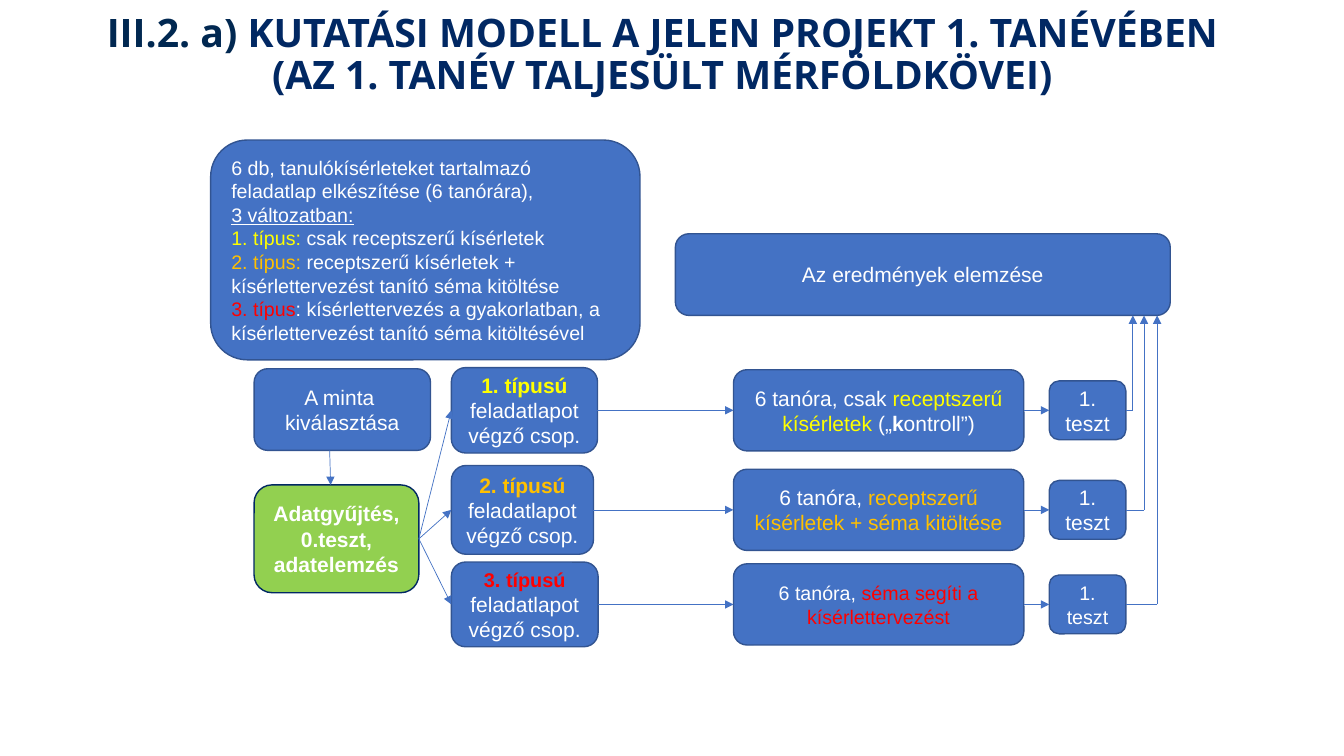
from lxml import etree
from pptx import Presentation
from pptx.dml.color import RGBColor
from pptx.enum.shapes import MSO_CONNECTOR, MSO_SHAPE
from pptx.enum.text import MSO_ANCHOR, MSO_AUTO_SIZE, PP_ALIGN
from pptx.oxml.ns import qn
from pptx.util import Pt

ROUNDED = MSO_SHAPE.ROUNDED_RECTANGLE
STRAIGHT = MSO_CONNECTOR.STRAIGHT
MIDDLE = MSO_ANCHOR.MIDDLE
FIXED = MSO_AUTO_SIZE.NONE
LEFT = PP_ALIGN.LEFT
CENTER = PP_ALIGN.CENTER

BLUE, BLUE_EDGE = "4472C4", "325491"
GREEN, NAVY, TITLE_NAVY = "92D050", "012863", "012851"
WHITE, YELLOW, ORANGE, RED = "FFFFFF", "FFFF00", "FFC000", "FF0000"
TOP_SIDE, LEFT_SIDE, BOTTOM_SIDE, RIGHT_SIDE = range(4)


def rgb(color):
    return RGBColor.from_string(color)


def write_text(frame, paragraphs, size=15, color=WHITE, font="Arial",
               bold=False, align=CENTER, spacing=1.0):
    frame.word_wrap = True
    frame.auto_size = FIXED
    frame.vertical_anchor = MIDDLE
    for index, runs in enumerate(paragraphs):
        paragraph = frame.add_paragraph() if index else frame.paragraphs[0]
        paragraph.alignment = align
        paragraph.line_spacing = spacing
        for words, style in runs:
            run = paragraph.add_run()
            run.text = words
            run.font.name = font
            run.font.size = Pt(style.get("size", size))
            run.font.bold = style.get("bold", bold)
            run.font.underline = style.get("underline", False)
            run.font.color.rgb = rgb(style.get("color", color))


def add_step(slide, box, paragraphs, fill=BLUE, edge=BLUE_EDGE, **text_format):
    step = slide.shapes.add_shape(ROUNDED, *map(Pt, box))
    step.shadow.inherit = False
    step.fill.solid()
    step.fill.fore_color.rgb = rgb(fill)
    step.line.color.rgb = rgb(edge)
    step.line.width = Pt(1)
    write_text(step.text_frame, paragraphs, **text_format)
    return step


def add_link(slide, start, end, arrow=True):
    link = slide.shapes.add_connector(STRAIGHT, *map(Pt, start + end))
    link.line.color.rgb = rgb(BLUE)
    link.line.width = Pt(0.5)
    if arrow:
        etree.SubElement(link.line._get_or_add_ln(), qn("a:tailEnd"), type="triangle")
    etree.SubElement(link._element.spPr, qn("a:effectLst"))
    return link


def join(slide, source, target):
    link = add_link(slide, (0, 0), (0, 0))
    link.begin_connect(source, RIGHT_SIDE)
    link.end_connect(target, LEFT_SIDE)


def draw_title(slide, box):
    title = slide.shapes.title
    title.left, title.top, title.width, title.height = map(Pt, box)
    write_text(title.text_frame, [
        [("III.2. a) ", {"color": TITLE_NAVY}),
         ("KUTATÁSI MODELL A JELEN PROJEKT 1. TANÉVÉBEN", {})],
        [("(AZ 1. TANÉV TALJESÜLT MÉRFÖLDKÖVEI)", {})],
    ], size=28, color=NAVY, font="Open Sans", bold=True, spacing=0.9)


def draw_worksheets(slide, box):
    add_step(slide, box, [
        [("6 db, tanulókísérleteket tartalmazó feladatlap elkészítése (6 tanórára),", {})],
        [("3 változatban:", {"underline": True})],
        [("1. típus: ", {"color": YELLOW}), ("csak receptszerű kísérletek", {})],
        [("2. típus: ", {"color": ORANGE}),
         ("receptszerű kísérletek + kísérlettervezést tanító séma kitöltése", {})],
        [("3. típus", {"color": RED}),
         (": kísérlettervezés a gyakorlatban, a kísérlettervezést tanító séma kitöltésével", {})],
    ], size=14, align=LEFT)


def draw_preparation(slide, box):
    left, top, width, height = box
    add_step(slide, (left, top, width, 58.3),
             [[("A minta ", {})], [("kiválasztása", {})]])
    data_top = top + height - 77
    data = add_step(slide, (left, data_top, width - 8.3, 77),
                    [[("Adatgyűjtés, 0.teszt, adatelemzés", {})]],
                    fill=GREEN, edge=NAVY, bold=True)
    add_link(slide, (left + 54, top + 58.3), (left + 54.7, data_top))
    return data


def draw_branch(slide, box, data, results_bottom, group_width, group_size,
                size, name, color, lesson, return_offset):
    left, top, width, height = box
    middle = top + height / 2
    group = add_step(slide, (left, top, group_width, height), [
        [(name, {"color": color, "bold": True, "size": group_size}),
         ("feladatlapot végző csop.", {})]])
    lessons = add_step(slide, (left + 201.5, middle - 29, 207.4, 58), [lesson], size=size)
    test_left = left + width - 54.7
    test = add_step(slide, (test_left, middle - 21, 54.7, 42),
                    [[("1. teszt", {})]], size=size)
    for source, target in ((data, group), (group, lessons), (lessons, test)):
        join(slide, source, target)
    return_x = left + width + return_offset
    exit_line = add_link(slide, (left + width, middle), (return_x, middle), arrow=False)
    exit_line.begin_connect(test, RIGHT_SIDE)
    add_link(slide, (return_x, middle), (return_x, results_bottom))


def draw_results(slide, box):
    add_step(slide, box, [[("Az eredmények elemzése", {})]])


def main():
    deck = Presentation()
    deck.slide_width, deck.slide_height = Pt(960), Pt(540)
    slide = deck.slides.add_slide(deck.slide_layouts[5])
    draw_title(slide, (33.8, 2.2, 878.4, 74.9))
    draw_worksheets(slide, (150.5, 100, 306.7, 157))
    data = draw_preparation(slide, (181.5, 263.4, 126, 160))
    results = (482.4, 167, 353.5, 58.3)
    draw_results(slide, results)
    branches = [
        (262.6, 61, 104.4, 15, 15, "1. típusú ", YELLOW,
         [("6 tanóra, csak", {}), (" receptszerű kísérletek ", {"color": YELLOW}),
          ("(„", {}), ("k", {"bold": True}), ("ontroll”)", {})], 5),
        (332.5, 63.4, 101.5, 15, 15, "2. típusú ", ORANGE,
         [("6 tanóra, ", {}),
          ("receptszerű kísérletek + séma kitöltése", {"color": ORANGE})], 13),
        (401.5, 60.5, 104.8, 14.2, 14, "3. típusú ", RED,
         [("6 tanóra,", {}),
          (" séma segíti a kísérlettervezést", {"color": RED})], 22.3),
    ]
    for top, height, *details in branches:
        draw_branch(slide, (322.4, top, 481.8, height), data,
                    results[1] + results[3], *details)
    deck.save("out.pptx")


if __name__ == "__main__":
    main()
